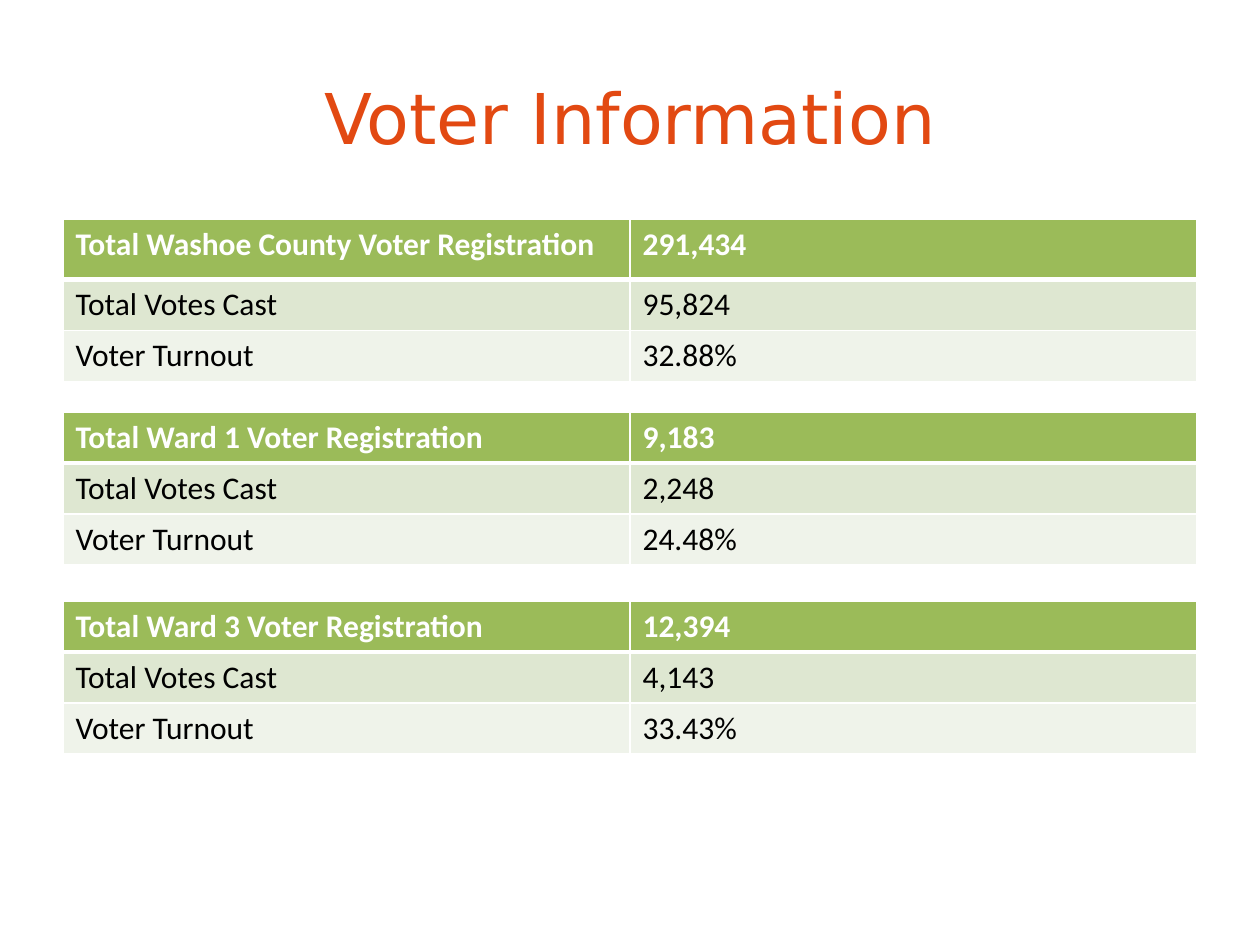
import pptx
import pptx.util
import pptx.dml.color
import pptx.enum.text
import pptx.oxml
import pptx.oxml.ns

Pt = pptx.util.Pt
Color = pptx.dml.color.RGBColor
ORANGE = Color(0xE2, 0x49, 0x12)
GREEN = Color(0x9B, 0xBB, 0x59)
SAGE = Color(0xDE, 0xE7, 0xD1)
PALE = Color(0xEF, 0xF3, 0xEA)
WHITE = Color(0xFF, 0xFF, 0xFF)
BLACK = Color(0, 0, 0)


class Page:
    left, width = 36, 648
    fills = (GREEN, SAGE, PALE)

    def __init__(self, slide):
        self.slide = slide

    def style(self, para, font, size, color, bold=False):
        for run in para.runs:
            run.font.name = font
            run.font.size = Pt(size)
            run.font.color.rgb = color
            run.font.bold = bold

    def title(self, text, top, height):
        box = self.slide.shapes.add_textbox(
            Pt(self.left), Pt(top), Pt(self.width), Pt(height))
        frame = box.text_frame
        frame.word_wrap = True
        frame.vertical_anchor = pptx.enum.text.MSO_ANCHOR.MIDDLE
        frame.text = text
        para = frame.paragraphs[0]
        para.alignment = pptx.enum.text.PP_ALIGN.CENTER
        self.style(para, "DejaVu Sans", 40, ORANGE)

    def border(self, cell, row):
        widths = {"L": 1, "R": 1, "T": 3 if row == 1 else 1, "B": 3 if row == 0 else 1}
        props = cell._tc.get_or_add_tcPr()
        for side, width in widths.items():
            props.append(pptx.oxml.parse_xml(
                f'<a:ln{side} {pptx.oxml.ns.nsdecls("a")} w="{Pt(width)}">'
                f'<a:solidFill><a:srgbClr val="{WHITE}"/></a:solidFill></a:ln{side}>'))

    def table(self, rows, top, heights):
        shape = self.slide.shapes.add_table(
            len(rows), 2, Pt(self.left), Pt(top), Pt(self.width), Pt(sum(heights)))
        grid = shape.table
        for i, row in enumerate(rows):
            grid.rows[i].height = Pt(heights[i])
            for j, text in enumerate(row):
                cell = grid.cell(i, j)
                self.border(cell, i)
                cell.fill.solid()
                cell.fill.fore_color.rgb = self.fills[i]
                cell.text_frame.text = text
                self.style(cell.text_frame.paragraphs[0], "Calibri", 18,
                           BLACK if i else WHITE, i == 0)


def main():
    deck = pptx.Presentation()
    deck.slide_width, deck.slide_height = Pt(720), Pt(540)
    page = Page(deck.slides.add_slide(deck.slide_layouts[6]))
    page.title("Voter Information", 21.6, 90)
    groups = (
        ("Washoe County", "291,434", "95,824", "32.88%", 125.3, 34.3),
        ("Ward 1", "9,183", "2,248", "24.48%", 235.4, 29.2),
        ("Ward 3", "12,394", "4,143", "33.43%", 343.4, 29.2),
    )
    for area, total, cast, rate, top, head in groups:
        rows = ((f"Total {area} Voter Registration", total),
                ("Total Votes Cast", cast), ("Voter Turnout", rate))
        page.table(rows, top, (head, 29.2, 29.2))
    deck.save("out.pptx")


if __name__ == "__main__":
    main()
